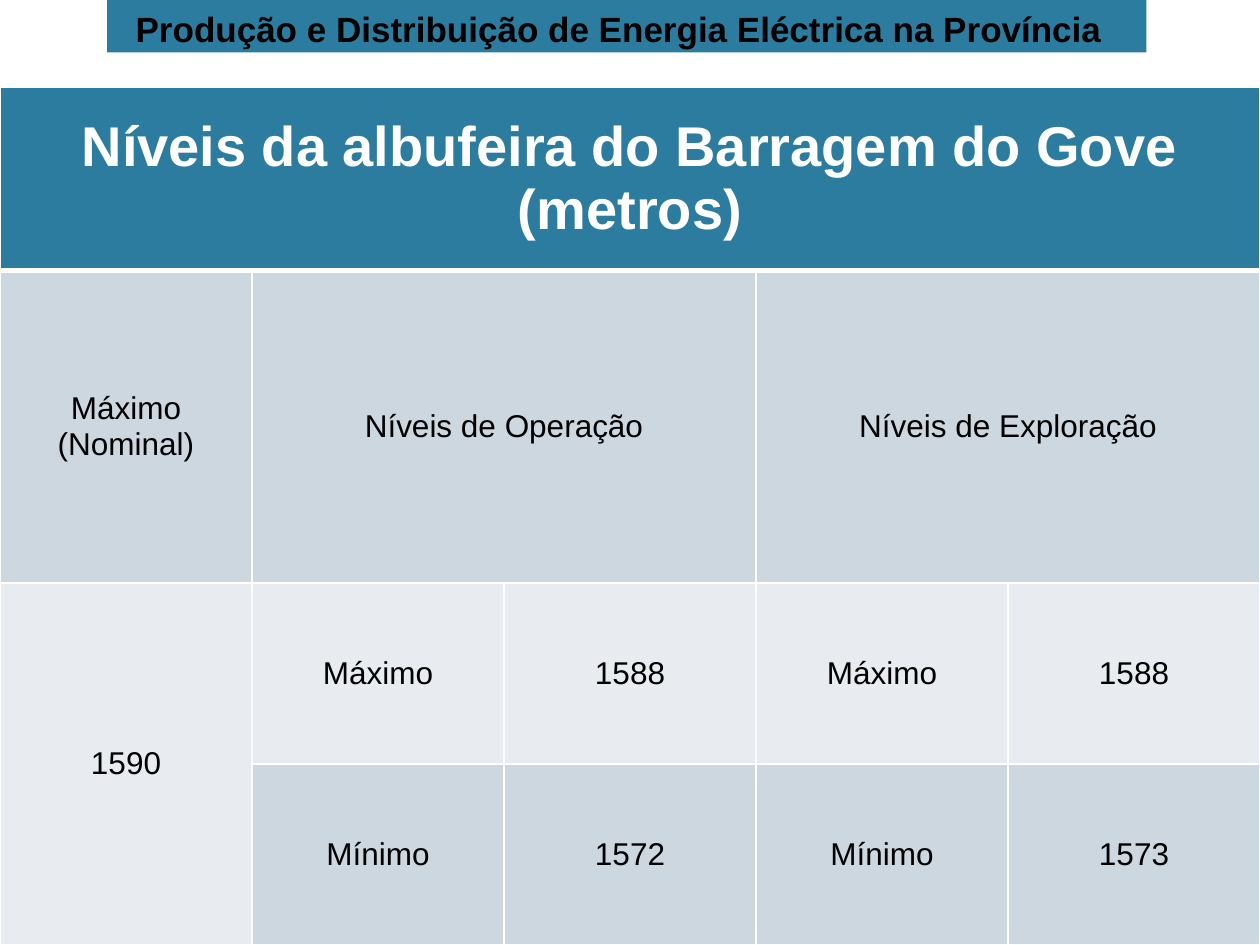
"""Build the slide on the reservoir levels of the Gove dam."""
from dataclasses import dataclass

import pptx
import pptx.dml.color
import pptx.enum.shapes
import pptx.enum.text
import pptx.oxml
import pptx.oxml.ns
import pptx.util
from pptx.util import Cm

COLORS = {"teal": "2C7C9F", "dark": "CDD7DF", "light": "E8ECF0",
          "white": "FFFFFF", "black": "000000"}
ROW_HEIGHTS = (3.7, 6.3, 3.65, 3.65)
COLUMNS = 5


@dataclass
class Level:
    row: int
    col: int
    text: str
    fill: str
    rows: int = 1
    cols: int = 1
    size: int = 18
    color: str = "black"
    bold: bool = False


LEVELS = [
    Level(0, 0, "Níveis da albufeira do Barragem do Gove (metros)", "teal",
          cols=COLUMNS, size=32, color="white", bold=True),
    Level(1, 0, "Máximo (Nominal)", "dark"),
    Level(1, 1, "Níveis de Operação", "dark", cols=2),
    Level(1, 3, "Níveis de Exploração", "dark", cols=2),
    Level(2, 0, "1590", "light", rows=2),
]
for row, fill, values in ((2, "light", ("Máximo", "1588", "Máximo", "1588")),
                          (3, "dark", ("Mínimo", "1572", "Mínimo", "1573"))):
    LEVELS += [Level(row, col, text, fill) for col, text in enumerate(values, 1)]


def rgb(name: str) -> pptx.dml.color.RGBColor:
    return pptx.dml.color.RGBColor.from_string(COLORS[name])


def format_text(tf, size: int, color: str, bold: bool, align) -> None:
    tf.vertical_anchor = pptx.enum.text.MSO_ANCHOR.MIDDLE
    p = tf.paragraphs[0]
    p.alignment = align
    for r in p.runs:
        r.font.name = "Arial"
        r.font.size = pptx.util.Pt(size)
        r.font.bold = bold
        r.font.color.rgb = rgb(color)


def add_borders(cell, row: int) -> None:
    widths = {"L": 1, "R": 1, "T": 3 if row == 1 else 1, "B": 3 if row == 0 else 1}
    tc_pr = cell._tc.get_or_add_tcPr()
    for side, width in widths.items():
        tc_pr.append(pptx.oxml.parse_xml(
            f'<a:ln{side} {pptx.oxml.ns.nsdecls("a")} w="{pptx.util.Pt(width)}">'
            f'<a:solidFill><a:srgbClr val="{COLORS["white"]}"/></a:solidFill>'
            f'</a:ln{side}>'))


def add_title(s) -> None:
    title = s.shapes.title
    title.left, title.top, title.width, title.height = Cm(2.48), Cm(0.04), Cm(20.8), Cm(1.08)
    title.text_frame.text = "Produção e Distribuição de Energia Eléctrica na Província"
    format_text(title.text_frame, 20, "black", True, pptx.enum.text.PP_ALIGN.LEFT)
    bar = s.shapes.add_shape(pptx.enum.shapes.MSO_SHAPE.RECTANGLE,
                             Cm(2.16), Cm(0), Cm(20.95), Cm(1.06))
    bar.shadow.inherit = False
    bar.fill.solid()
    bar.fill.fore_color.rgb = rgb("teal")
    bar.line.fill.background()
    title.element.addprevious(bar.element)


def add_level(table, level: Level) -> None:
    last_row, last_col = level.row + level.rows, level.col + level.cols
    for row in range(level.row, last_row):
        for col in range(level.col, last_col):
            cell = table.cell(row, col)
            add_borders(cell, row)
            cell.fill.solid()
            cell.fill.fore_color.rgb = rgb(level.fill)
    cell = table.cell(level.row, level.col)
    if level.rows * level.cols > 1:
        cell.merge(table.cell(last_row - 1, last_col - 1))
    cell.text_frame.text = level.text
    cell.vertical_anchor = pptx.enum.text.MSO_ANCHOR.MIDDLE
    format_text(cell.text_frame, level.size, level.color, level.bold,
                pptx.enum.text.PP_ALIGN.CENTER)
    cell.vertical_anchor = pptx.enum.text.MSO_ANCHOR.MIDDLE


def add_levels_table(s) -> None:
    table = s.shapes.add_table(len(ROW_HEIGHTS), COLUMNS, Cm(0), Cm(1.75),
                               Cm(25.4), Cm(sum(ROW_HEIGHTS))).table
    for row, height in zip(table.rows, ROW_HEIGHTS):
        row.height = Cm(height)
    for level in LEVELS:
        add_level(table, level)


def main() -> None:
    prs = pptx.Presentation()
    prs.slide_width, prs.slide_height = Cm(25.4), Cm(19.05)
    s = prs.slides.add_slide(prs.slide_layouts.get_by_name("Title Only"))
    add_title(s)
    add_levels_table(s)
    prs.save("out.pptx")


if __name__ == "__main__":
    main()
